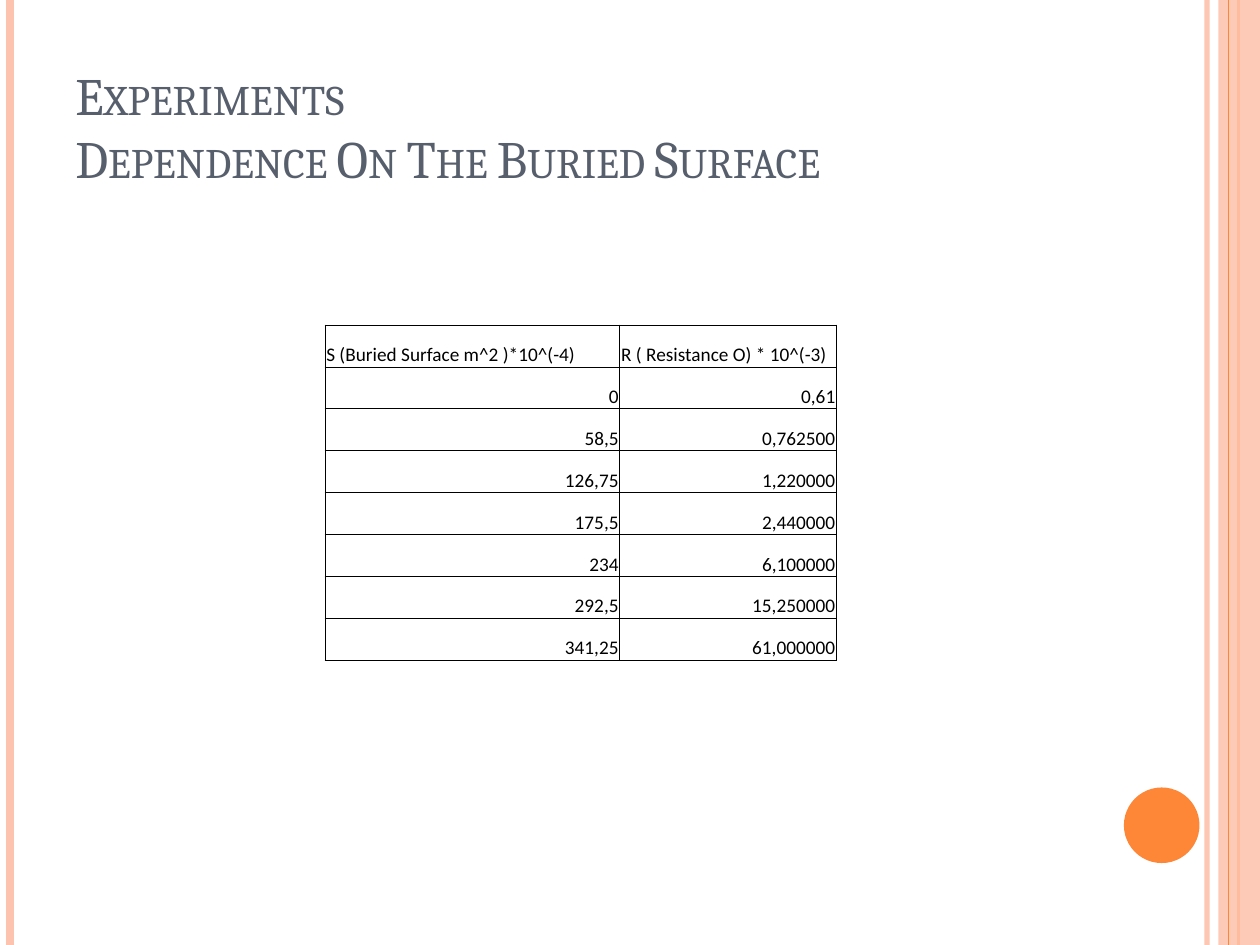
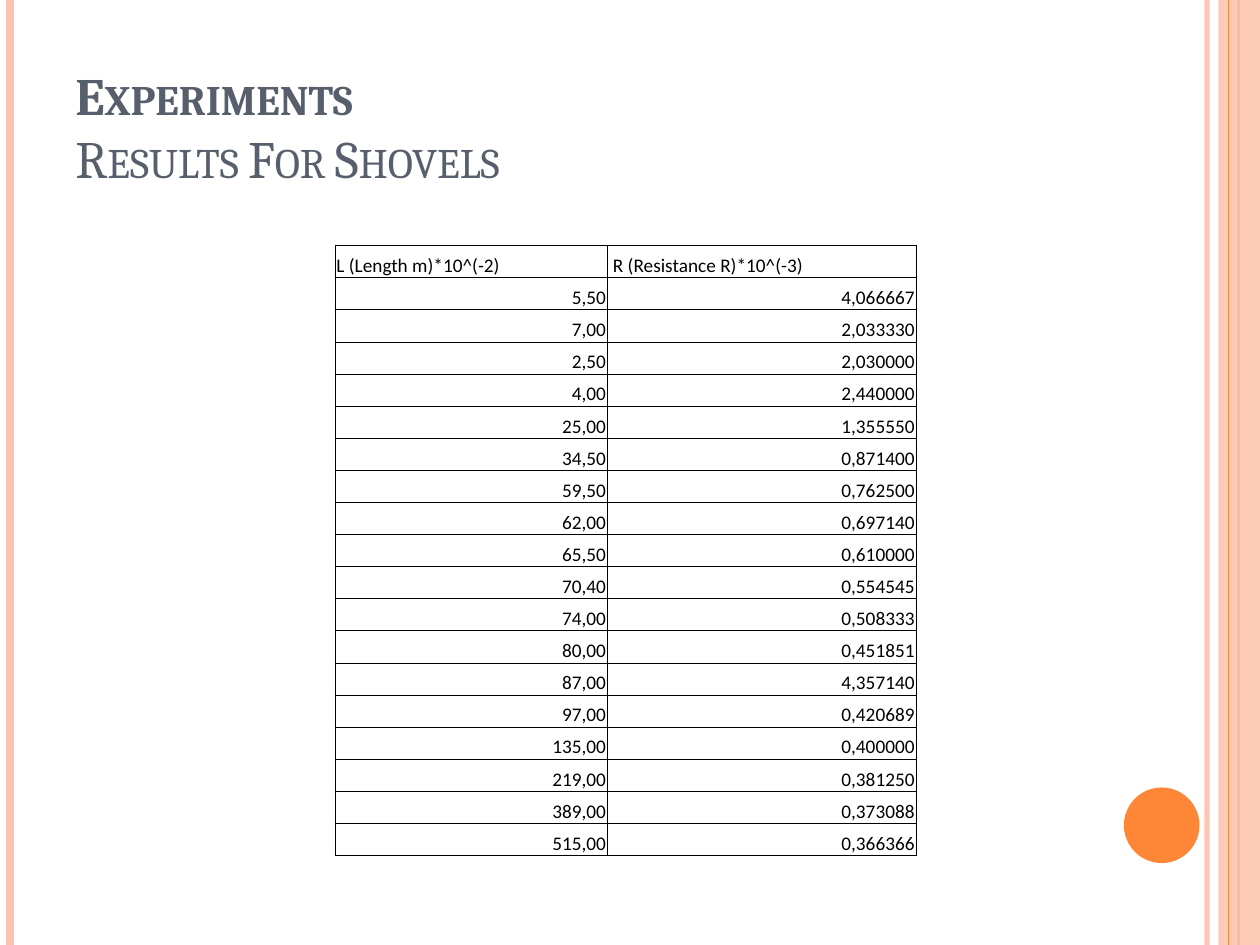
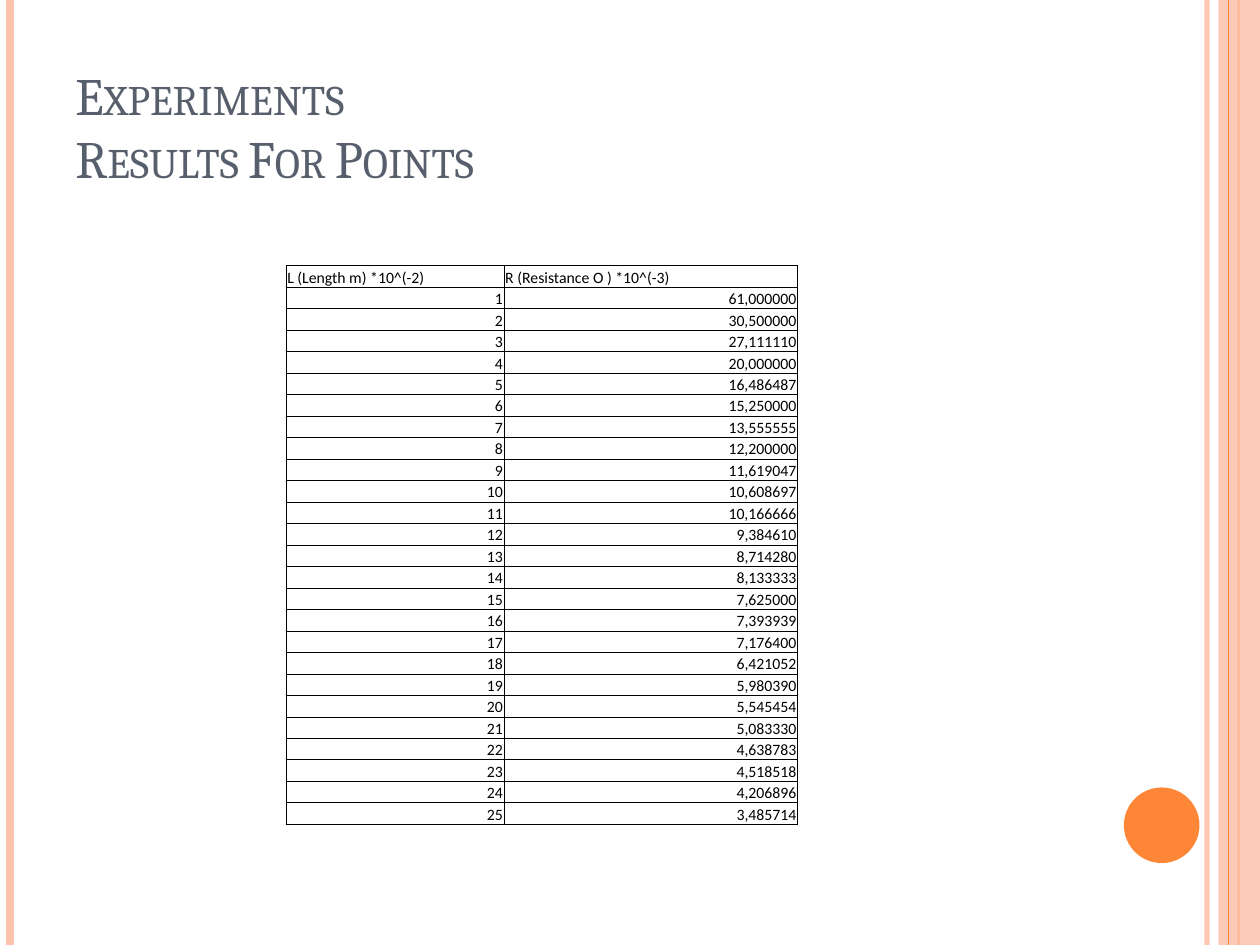
from dataclasses import dataclass

from lxml import etree
from pptx import Presentation
from pptx.dml.color import RGBColor
from pptx.enum.shapes import MSO_CONNECTOR, MSO_SHAPE
from pptx.enum.text import MSO_ANCHOR, PP_ALIGN
from pptx.oxml.ns import qn
from pptx.util import Inches, Pt

LINE = MSO_CONNECTOR.STRAIGHT
RECT, OVAL = MSO_SHAPE.RECTANGLE, MSO_SHAPE.OVAL
BOTTOM = MSO_ANCHOR.BOTTOM
LEFT, RIGHT = PP_ALIGN.LEFT, PP_ALIGN.RIGHT


@dataclass(frozen=True)
class Theme:
    peach: str = "FEC3AE"
    orange: str = "FE8637"
    slate: str = "575F6D"
    black: str = "000000"
    head: str = "Cambria"
    body: str = "Calibri"
    title: float = 30
    text: float = 11
    small: float = 9
    rule: float = 0.5


THEME = Theme()
PAGE = (0, 0, 10, 7.5)
TITLE = (0.5, 0.3, 8.17, 1.25)
INSETS = {
    "margin_left": Inches(0.01),
    "margin_right": Inches(0.01),
    "margin_top": Inches(0.01),
    "margin_bottom": 0,
}
PLAIN = {"first_row": False, "horz_banding": False}

SURFACE = [
    ("S (Buried Surface m^2 )*10^(-4)", "R ( Resistance O) * 10^(-3)"),
    ("0", "0,61"),
    ("58,5", "0,762500"),
    ("126,75", "1,220000"),
    ("175,5", "2,440000"),
    ("234", "6,100000"),
    ("292,5", "15,250000"),
    ("341,25", "61,000000"),
]
SHOVELS = [
    ("L (Length m)*10^(-2)", " R (Resistance R)*10^(-3)"),
    ("5,50", "4,066667"),
    ("7,00", "2,033330"),
    ("2,50", "2,030000"),
    ("4,00", "2,440000"),
    ("25,00", "1,355550"),
    ("34,50", "0,871400"),
    ("59,50", "0,762500"),
    ("62,00", "0,697140"),
    ("65,50", "0,610000"),
    ("70,40", "0,554545"),
    ("74,00", "0,508333"),
    ("80,00", "0,451851"),
    ("87,00", "4,357140"),
    ("97,00", "0,420689"),
    ("135,00", "0,400000"),
    ("219,00", "0,381250"),
    ("389,00", "0,373088"),
    ("515,00", "0,366366"),
]
OHMS = """61,000000 30,500000 27,111110 20,000000 16,486487
15,250000 13,555555 12,200000 11,619047 10,608697
10,166666 9,384610 8,714280 8,133333 7,625000
7,393939 7,176400 6,421052 5,980390 5,545454
5,083330 4,638783 4,518518 4,206896 3,485714""".split()
POINTS = [("L (Length m) *10^(-2)", "R (Resistance O ) *10^(-3)")]
POINTS += [(str(length), ohm) for length, ohm in enumerate(OHMS, 1)]

SLIDES = [
    dict(lines=("Experiments", "Dependence On The Buried Surface"), bold=False,
         rows=SURFACE, box=(2.58, 2.58, 4.06, 2.66), first=2.34, size=THEME.text),
    dict(lines=("Experiments", "Results For Shovels"), bold=True,
         rows=SHOVELS, box=(2.66, 1.95, 4.61, 4.84), first=2.16, size=THEME.text),
    dict(lines=("Experiments", "Results For Points"), bold=False,
         rows=POINTS, box=(2.27, 2.11, 4.06, 4.44), first=1.73, size=THEME.small),
]


def apply(target, values):
    for name, value in values.items():
        setattr(target, name, value)


def style(font, name, size, color, bold=False):
    apply(font, {"name": name, "size": Pt(size), "bold": bold})
    font.color.rgb = RGBColor.from_string(color)


def fade(shape, percent):
    for color in shape._element.spPr.iter(qn("a:srgbClr")):
        etree.SubElement(color, qn("a:alpha"), val=str(percent * 1000))


def stripe(slide, box, offset, color, width):
    left, top, _, height = box
    x = Inches(left + offset)
    line = slide.shapes.add_connector(LINE, x, Inches(top), x, Inches(top + height))
    line.line.width = Pt(width)
    line.line.color.rgb = RGBColor.from_string(color)
    etree.SubElement(line._element.spPr, qn("a:effectLst"))
    return line


def solid(slide, kind, box, color):
    shape = slide.shapes.add_shape(kind, *map(Inches, box))
    shape.shadow.inherit = False
    shape.fill.solid()
    shape.fill.fore_color.rgb = RGBColor.from_string(color)
    shape.line.fill.background()
    return shape


def frame(slide, box):
    left, top, width, height = box
    fade(stripe(slide, box, width - 0.42, THEME.peach, 3), 93)
    stripe(slide, box, 0.08, THEME.peach, 4.5)
    stripe(slide, box, width - 0.17, THEME.orange, 1.5)
    band = (left + width - 0.33, top, 0.33, height)
    fade(solid(slide, RECT, band, THEME.peach), 87)
    stripe(slide, box, width - 0.25, THEME.orange, 0.75)
    dot = (left + width - 1.08, top + height - 1.25, 0.6, 0.6)
    solid(slide, OVAL, dot, THEME.orange)


def heading(slide, box, lines, bold):
    text = slide.shapes.add_textbox(*map(Inches, box)).text_frame
    apply(text, {"word_wrap": True, "vertical_anchor": BOTTOM})
    para = text.paragraphs[0]
    style(para.font, THEME.head, THEME.title, THEME.slate)
    for index, line in enumerate(lines):
        if index:
            para.add_line_break()
        run = para.add_run()
        run.text = line
        style(run.font, THEME.head, THEME.title, THEME.slate, bold and index == 0)
        run.font._element.set("cap", "small")


def border(cell):
    props = cell._tc.get_or_add_tcPr()
    for side in ("lnL", "lnR", "lnT", "lnB"):
        edge = etree.SubElement(props, qn(f"a:{side}"), w=str(Pt(THEME.rule)))
        fill = etree.SubElement(edge, qn("a:solidFill"))
        etree.SubElement(fill, qn("a:srgbClr"), val=THEME.black)


def grid(slide, box, rows, first, size):
    width, height = box[2:]
    table = slide.shapes.add_table(len(rows), 2, *map(Inches, box)).table
    apply(table, PLAIN)
    for column, span in zip(table.columns, (first, width - first)):
        column.width = Inches(span)
    for index, (row, values) in enumerate(zip(table.rows, rows)):
        row.height = Inches(height / len(rows))
        for cell, value in zip(row.cells, values):
            border(cell)
            cell.fill.background()
            apply(cell, {**INSETS, "vertical_anchor": BOTTOM})
            para = cell.text_frame.paragraphs[0]
            para.alignment = RIGHT if index else LEFT
            run = para.add_run()
            run.text = value
            style(run.font, THEME.body, size, THEME.black)


def main():
    deck = Presentation()
    apply(deck, {"slide_width": Inches(PAGE[2]), "slide_height": Inches(PAGE[3])})
    for page in SLIDES:
        slide = deck.slides.add_slide(deck.slide_layouts[6])
        frame(slide, PAGE)
        heading(slide, TITLE, page["lines"], page["bold"])
        grid(slide, page["box"], page["rows"], page["first"], page["size"])
    deck.save("out.pptx")


if __name__ == "__main__":
    main()
